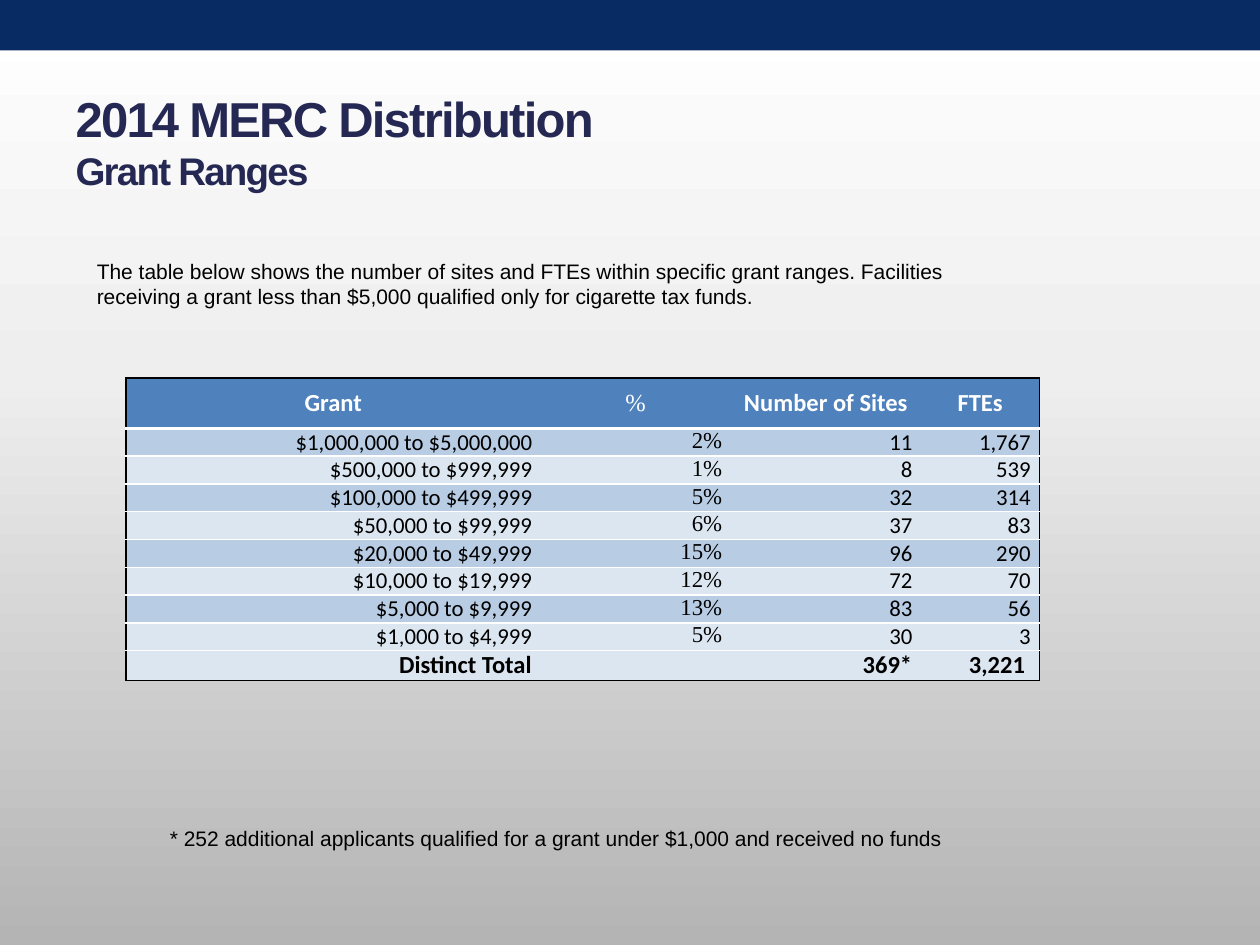
from lxml import etree
from pptx import Presentation
from pptx import util as u
from pptx.dml.color import RGBColor
from pptx.enum import shapes, text
from pptx.oxml.ns import qn

COLORS = {
    "white": "FFFFFF", "black": "000000", "navy": "072B62", "title": "242852",
    "header": "4F81BD", "band": "B8CCE4", "light": "DCE6F1",
    "mid_gray": "EEEEEE", "gray": "B4B4B4",
}
GRID_COLS, GRID_ROWS = 40, 30
ALIGN = text.PP_ALIGN
SANS, TABLE_FONT, PERCENT_FONT = "Arial", "Calibri", "Times New Roman"


def rgb(name):
    return RGBColor.from_string(COLORS[name])


def add_color(parent, name):
    fill = etree.SubElement(parent, qn("a:solidFill"))
    etree.SubElement(fill, qn("a:srgbClr"), val=COLORS[name])


class Deck:
    """Slide style and builder; lengths are columns and rows of the grid."""

    def __init__(self):
        self.prs = Presentation()
        self.prs.slide_width, self.prs.slide_height = u.Inches(10), u.Inches(7.5)
        self.slide = self.prs.slides.add_slide(self.prs.slide_layouts[5])

    def x(self, cols):
        return round(self.prs.slide_width * cols / GRID_COLS)

    def y(self, rows):
        return round(self.prs.slide_height * rows / GRID_ROWS)

    def box(self, left, top, width, height):
        return self.x(left), self.y(top), self.x(width), self.y(height)

    def run(self, paragraph, words, size, font=SANS, color="black", bold=False):
        run = paragraph.add_run()
        run.text = words
        run.font.size, run.font.name, run.font.bold = u.Pt(size), font, bold
        run.font.color.rgb = rgb(color)
        return run

    def background(self, stops):
        fill = self.slide.background.fill
        fill.gradient()
        fill.gradient_angle = 270
        stop_list = self.slide.element.find(".//" + qn("a:gsLst"))
        for stop in list(stop_list):
            stop_list.remove(stop)
        for percent, color in stops:
            stop = etree.SubElement(stop_list, qn("a:gs"), pos=str(percent * 1000))
            etree.SubElement(stop, qn("a:srgbClr"), val=COLORS[color])

    def band(self, place, color):
        band = self.slide.shapes.add_shape(shapes.MSO_SHAPE.RECTANGLE, *self.box(*place))
        band.shadow.inherit = False
        band.fill.solid()
        band.fill.fore_color.rgb = rgb(color)
        band.line.fill.background()

    def title(self, place, lines):
        title = self.slide.shapes.title
        title.left, title.top, title.width, title.height = self.box(*place)
        frame = title.text_frame
        frame.word_wrap = True
        frame.auto_size = text.MSO_AUTO_SIZE.NONE
        frame.vertical_anchor = text.MSO_ANCHOR.MIDDLE
        heading = frame.paragraphs[0]
        heading.alignment = ALIGN.LEFT
        for number, (words, size) in enumerate(lines):
            if number:
                heading.add_line_break()
            run = self.run(heading, words, size, color="title", bold=True)
            run.font._element.set("spc", "-100")

    def note(self, place, words):
        frame = self.slide.shapes.add_textbox(*self.box(*place)).text_frame
        frame.word_wrap = True
        frame.auto_size = text.MSO_AUTO_SIZE.SHAPE_TO_FIT_TEXT
        self.run(frame.paragraphs[0], words, 12)

    def border(self, cell, side, color=None, width=1):
        line = etree.SubElement(cell._tc.get_or_add_tcPr(), qn("a:ln" + side),
                                w=str(u.Pt(width)))
        if color:
            add_color(line, color)
        else:
            etree.SubElement(line, qn("a:noFill"))

    def cell(self, cell, words, size, font, color, bold, align, fill):
        cell.margin_left = cell.margin_right = u.Inches(0.07)
        cell.margin_top = cell.margin_bottom = 0
        cell.fill.solid()
        cell.fill.fore_color.rgb = rgb(fill)
        paragraph = cell.text_frame.paragraphs[0]
        paragraph.alignment = align
        if words:
            self.run(paragraph, words, size, font, color, bold)
        else:
            etree.SubElement(paragraph._p, qn("a:endParaRPr"), sz=str(size * 100))

    def table(self, place, col_widths, row_heights, rows):
        table = self.slide.shapes.add_table(len(rows), len(col_widths),
                                            *self.box(*place)).table
        table.first_row = table.horz_banding = False
        for column, width in zip(table.columns, col_widths):
            column.width = self.x(width)
        for row, height in zip(table.rows, row_heights):
            row.height = self.y(height)
        last_row, last_col = len(rows) - 1, len(col_widths) - 1

        for r, row in enumerate(rows):
            header, total = r == 0, r == last_row
            fill = "header" if header else "band" if r % 2 and not total else "light"
            for c, words in enumerate(row):
                cell = table.cell(r, c)
                percent = c == 1
                self.border(cell, "L", None if c else "black")
                self.border(cell, "R", "black" if c == last_col else None)
                self.border(cell, "T", "black" if header else "white",
                            1.5 if r == 1 else 1)
                self.border(cell, "B", "black" if total else "white",
                            1.5 if header else 1)
                self.cell(cell, words,
                          size=14 if header or total else 13,
                          font=PERCENT_FONT if percent else TABLE_FONT,
                          color="white" if header else "black",
                          bold=(header or total) and not percent,
                          align=ALIGN.CENTER if header else ALIGN.RIGHT,
                          fill=fill)
                if header:
                    cell.vertical_anchor = text.MSO_ANCHOR.MIDDLE


GRANTS = [
    ("Grant", "%", "Number of Sites", "FTEs"),
    ("$1,000,000 to $5,000,000", "2%", "11", "1,767"),
    ("$500,000 to $999,999", "1%", "8", "539"),
    ("$100,000 to $499,999", "5%", "32", "314"),
    ("$50,000 to $99,999", "6%", "37", "83"),
    ("$20,000 to $49,999", "15%", "96", "290"),
    ("$10,000 to $19,999", "12%", "72", "70"),
    ("$5,000 to $9,999", "13%", "83", "56"),
    ("$1,000 to $4,999", "5%", "30", "3"),
    ("Distinct Total", "", "369*", "3,221 "),
]


def main():
    deck = Deck()

    # Backdrop and top bands
    deck.background([(0, "white"), (40, "mid_gray"), (100, "gray")])
    deck.band((0, 0.96, GRID_COLS, 1), "white")
    deck.band((0, 0, GRID_COLS, 1.6), "navy")

    # Heading
    deck.title((2, 2.32, 36, 4.32), [("2014 MERC Distribution", 28), ("Grant Ranges", 22)])

    # Grant ranges
    deck.table((4, 12, 29, 9.48), [13.16, 6.04, 6.04, 3.76],
               [1.6] + [0.76] * (len(GRANTS) - 1), GRANTS)

    # Introduction and footnote
    deck.note((2.68, 8, 29.32, 2),
              "The table below shows the number of sites and FTEs within specific grant "
              "ranges. Facilities receiving a grant less than $5,000 qualified only for "
              "cigarette tax funds.")
    deck.note((5, 26, 30, 1.2),
              "* 252 additional applicants qualified for a grant under $1,000 "
              "and received no funds")

    deck.prs.save("out.pptx")


if __name__ == "__main__":
    main()
